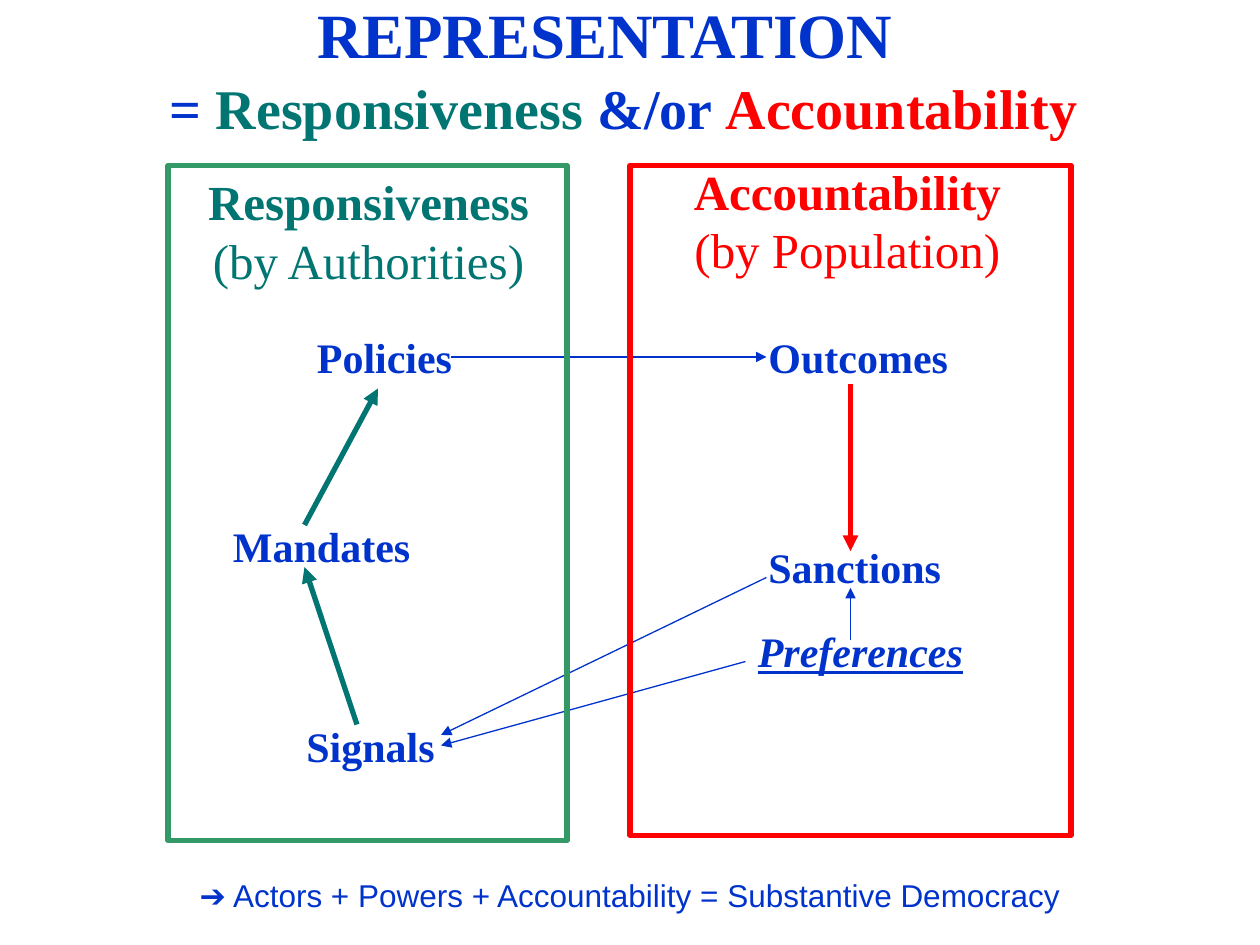
from dataclasses import dataclass

from lxml.etree import SubElement
from pptx import Presentation
from pptx.dml.color import RGBColor
from pptx.enum.shapes import MSO_CONNECTOR, MSO_SHAPE
from pptx.enum.text import MSO_ANCHOR, MSO_AUTO_SIZE, PP_ALIGN
from pptx.oxml.ns import qn
from pptx.util import Inches, Pt

COLORS = {"blue": "0033CC", "teal": "007572", "red": "FF0000", "green": "339966"}
SERIF, SANS = "Times New Roman", "Arial"
COLUMNS, ROWS = 120, 90


@dataclass(frozen=True)
class Span:
    text: str
    color: str = "blue"
    size: int = 24
    bold: bool = True
    italic: bool = False
    underline: bool = False
    name: str = SERIF


@dataclass(frozen=True)
class Label:
    """Text box on the grid; each inner tuple of lines is one paragraph."""
    area: tuple[float, float, float, float]
    lines: tuple[tuple[Span, ...], ...]
    align: PP_ALIGN = PP_ALIGN.LEFT
    wrap: bool = False


@dataclass(frozen=True)
class Arrow:
    start: tuple[float, float]
    end: tuple[float, float]
    color: str = "blue"
    width: float = 0.75


@dataclass(frozen=True)
class Frame:
    area: tuple[float, float, float, float]
    color: str


def heading(area: tuple, actor: str, name: str, color: str) -> Label:
    lines = ((Span(name, color, 28),), (Span(f"(by {actor})", color, 28, bold=False),))
    return Label(area, lines, PP_ALIGN.CENTER)


def term(left: float, top: float, width: float, text: str, **style) -> Label:
    return Label((left, top, width, 6), ((Span(text, **style),),))


TITLE = Label((29, -1, 58, 8.4), ((Span("REPRESENTATION", size=36),),))
LABELS = [
    Label((15, 6.4, 89, 7.6), ((
        Span("= ", size=32), Span("Responsiveness", "teal", 32),
        Span(" &/or ", size=32), Span("Accountability", "red", 32)),)),
    heading((18.4, 15.75, 33.4, 12.5), "Authorities", "Responsiveness", "teal"),
    heading((64.7, 14.75, 32, 12.5), "Population", "Accountability", "red"),
    term(29, 31, 15.2, "Policies"),
    term(21, 49, 19.3, "Mandates"),
    term(28, 68, 14.6, "Signals"),
    term(72, 31, 19.6, "Outcomes"),
    term(72, 51, 18.8, "Sanctions"),
    term(71, 59, 24, "Preferences", italic=True, underline=True),
    Label((0, 82.8, COLUMNS, 4.8), ((
        Span("➔ Actors + Powers + Accountability = Substantive Democracy",
             size=18, bold=False, name=SANS),),), PP_ALIGN.CENTER, True),
]
FRAMES = [Frame((16, 15.75, 38, 64.3), "green"), Frame((60, 15.75, 42, 63.8), "red")]
ARROWS = [
    Arrow((34, 69), (29, 54), "teal", 3),
    Arrow((29, 50), (36, 37), "teal", 3),
    Arrow((81, 36.6), (81, 52.5), "red", 3),
    Arrow((43, 34), (73, 34)),
    Arrow((71, 63), (42, 71)),
    Arrow((73, 55), (42, 70)),
    Arrow((81, 61), (81, 56)),
]

deck = Presentation()
deck.slide_width, deck.slide_height = Inches(10), Inches(7.5)
page = deck.slides.add_slide(deck.slide_layouts[5])


def place(*cells: float) -> list[int]:
    """Turn alternating columns and rows into slide lengths."""
    units = (deck.slide_width / COLUMNS, deck.slide_height / ROWS)
    return [round(cell * units[index % 2]) for index, cell in enumerate(cells)]


def rgb(color: str) -> RGBColor:
    return RGBColor.from_string(COLORS[color])


def write(box, label: Label) -> None:
    box.left, box.top, box.width, box.height = place(*label.area)
    frame = box.text_frame
    frame_format = {
        "auto_size": MSO_AUTO_SIZE.NONE, "word_wrap": label.wrap,
        "vertical_anchor": MSO_ANCHOR.TOP,
        "margin_left": Inches(0.1), "margin_right": Inches(0.1),
        "margin_top": Inches(0.05), "margin_bottom": Inches(0.05),
    }
    for key, value in frame_format.items():
        setattr(frame, key, value)
    for index, line in enumerate(label.lines):
        para = frame.add_paragraph() if index else frame.paragraphs[0]
        para.alignment = label.align
        for span in line:
            run = para.add_run()
            run.text = span.text
            for key in ("name", "bold", "italic", "underline"):
                setattr(run.font, key, getattr(span, key))
            run.font.size = Pt(span.size)
            run.font.color.rgb = rgb(span.color)


def draw_frame(frame: Frame) -> None:
    box = page.shapes.add_shape(MSO_SHAPE.RECTANGLE, *place(*frame.area))
    box.shadow.inherit = False
    box.fill.background()
    box.line.color.rgb = rgb(frame.color)
    box.line.width = Pt(3)


def draw_arrow(arrow: Arrow) -> None:
    line = page.shapes.add_connector(
        MSO_CONNECTOR.STRAIGHT, *place(*arrow.start, *arrow.end))
    line.line.color.rgb = rgb(arrow.color)
    line.line.width = Pt(arrow.width)
    properties = line._element.spPr
    SubElement(properties.find(qn("a:ln")), qn("a:tailEnd"), type="triangle")
    SubElement(properties, qn("a:effectLst"))


write(page.shapes.title, TITLE)
for arrow in ARROWS:
    draw_arrow(arrow)
for frame in FRAMES:
    draw_frame(frame)
for label in LABELS:
    write(page.shapes.add_textbox(*place(*label.area)), label)

deck.save("out.pptx")
